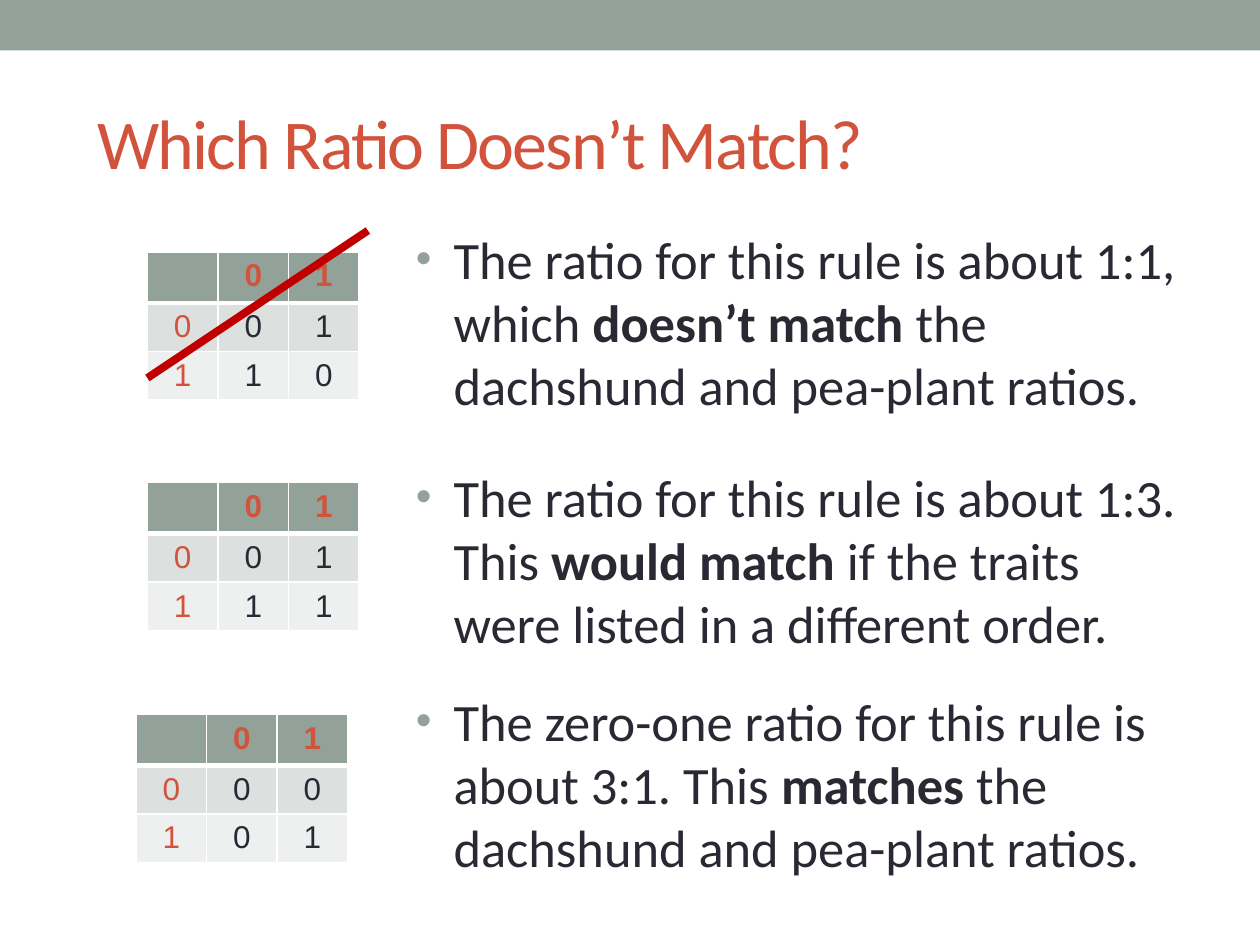
from lxml.etree import SubElement
from pptx import Presentation
from pptx.dml.color import RGBColor
from pptx.enum.shapes import MSO_CONNECTOR, MSO_SHAPE
from pptx.enum.text import MSO_ANCHOR, MSO_AUTO_SIZE, PP_ALIGN
from pptx.oxml.ns import qn
from pptx.util import Inches, Pt

SAGE, RUST, INK, WHITE, RED = "93A299", "D2533C", "292934", "FFFFFF", "C00000"
ROW_FILLS = [SAGE, "DCE0DE", "EEF0EF"]
CELL_WIDTH, CELL_HEIGHT = 0.56, 0.385

# Left, top and the output rows of each rule
RULES = [
    (1.17, 2, ["01", "10"]),
    (1.17, 3.83, ["01", "11"]),
    (1.08, 5.67, ["00", "01"]),
]

# Space before, then the text before, in and after the bold part
FINDINGS = [
    (0, "The ratio for this rule is about 1:1, which ", "doesn’t match ",
     "the dachshund and pea-plant ratios."),
    (28, "The ratio for this rule is about 1:3. This ", "would match ",
     "if the traits were listed in a different order."),
    (20, "The zero-one ratio for this rule is about 3:1. This ", "matches",
     " the dachshund and pea-plant ratios."),
]


def rgb(value):
    return RGBColor.from_string(value)


def add_text(paragraph, text, size, color, font="Calibri", bold=False, spacing=None):
    """Append a run; spacing is the letter spacing in points."""
    run = paragraph.add_run()
    run.text = text
    run.font.name = font
    run.font.size = Pt(size)
    run.font.bold = bold
    run.font.color.rgb = rgb(color)
    if spacing is not None:
        run._r.get_or_add_rPr().set("spc", str(int(spacing * 100)))


def place(placeholder, left, top, width, height, anchor):
    placeholder.left, placeholder.top = Inches(left), Inches(top)
    placeholder.width, placeholder.height = Inches(width), Inches(height)
    frame = placeholder.text_frame
    frame.auto_size = MSO_AUTO_SIZE.NONE
    frame.word_wrap = True
    frame.vertical_anchor = anchor
    return frame


def add_bullet(paragraph):
    properties = paragraph._p.get_or_add_pPr()
    properties.set("marL", str(Inches(3)))
    properties.set("indent", str(Inches(-0.3)))
    bullet_color = SubElement(properties, qn("a:buClr"))
    SubElement(bullet_color, qn("a:srgbClr"), val=SAGE)
    SubElement(properties, qn("a:buSzPct"), val="85000")
    SubElement(properties, qn("a:buFont"), typeface="Arial")
    SubElement(properties, qn("a:buChar"), char="•")


def add_band(slide, width):
    band = slide.shapes.add_shape(MSO_SHAPE.RECTANGLE, 0, 0, width, Inches(0.4))
    band.shadow.inherit = False
    band.fill.solid()
    band.fill.fore_color.rgb = rgb(SAGE)
    band.line.fill.background()


def fill_title(slide):
    frame = place(slide.shapes.title, 0.67, 0.58, 8.83, 1.08, MSO_ANCHOR.MIDDLE)
    heading = frame.paragraphs[0]
    heading.alignment = PP_ALIGN.LEFT
    add_text(heading, "Which Ratio Doesn’t Match?", 40, RUST, spacing=-1)


def fill_findings(slide):
    frame = place(slide.placeholders[1], 0.5, 1.75, 9, 5.33, MSO_ANCHOR.TOP)
    for index, (space, before, verdict, after) in enumerate(FINDINGS):
        finding = frame.add_paragraph() if index else frame.paragraphs[0]
        add_bullet(finding)
        finding.space_before = Pt(space)
        finding.line_spacing = Pt(36)
        for text, bold in [(before, False), (verdict, True), (after, False)]:
            add_text(finding, text, 30, INK, bold=bold)


def set_borders(cell, **widths):
    """Draw white borders; widths maps lnL, lnR, lnT and lnB to points."""
    properties = cell._tc.get_or_add_tcPr()
    for side, width in widths.items():
        border = SubElement(properties, qn(f"a:{side}"), w=str(Pt(width)))
        fill = SubElement(border, qn("a:solidFill"))
        SubElement(fill, qn("a:srgbClr"), val=WHITE)


def add_rule_table(slide, left, top, outputs):
    rows = [" 01"] + [label + values for label, values in zip("01", outputs)]
    table = slide.shapes.add_table(
        3, 3, Inches(left), Inches(top),
        Inches(3 * CELL_WIDTH), Inches(3 * CELL_HEIGHT)).table
    for column in table.columns:
        column.width = Inches(CELL_WIDTH)
    for r, values in enumerate(rows):
        table.rows[r].height = Inches(CELL_HEIGHT)
        for c, value in enumerate(values):
            cell = table.cell(r, c)
            set_borders(cell, lnL=1, lnR=1, lnT=3 if r == 1 else 1,
                        lnB=3 if r == 0 else 1)
            cell.fill.solid()
            cell.fill.fore_color.rgb = rgb(ROW_FILLS[r])
            if value.strip():
                entry = cell.text_frame.paragraphs[0]
                entry.alignment = PP_ALIGN.CENTER
                add_text(entry, value, 18, INK if r and c else RUST,
                         font="Arial", bold=r == 0)


def add_strike(slide):
    strike = slide.shapes.add_connector(
        MSO_CONNECTOR.STRAIGHT, Inches(1.17), Inches(3), Inches(2.92), Inches(1.83))
    strike.line.color.rgb = rgb(RED)
    strike.line.width = Pt(4.5)
    SubElement(strike._element.spPr, qn("a:effectLst"))


def main():
    deck = Presentation()
    deck.slide_width, deck.slide_height = Inches(10), Inches(7.5)
    slide = deck.slides.add_slide(deck.slide_layouts[1])
    add_band(slide, deck.slide_width)
    fill_title(slide)
    fill_findings(slide)
    for left, top, outputs in RULES:
        add_rule_table(slide, left, top, outputs)
    add_strike(slide)
    deck.save("out.pptx")


if __name__ == "__main__":
    main()
